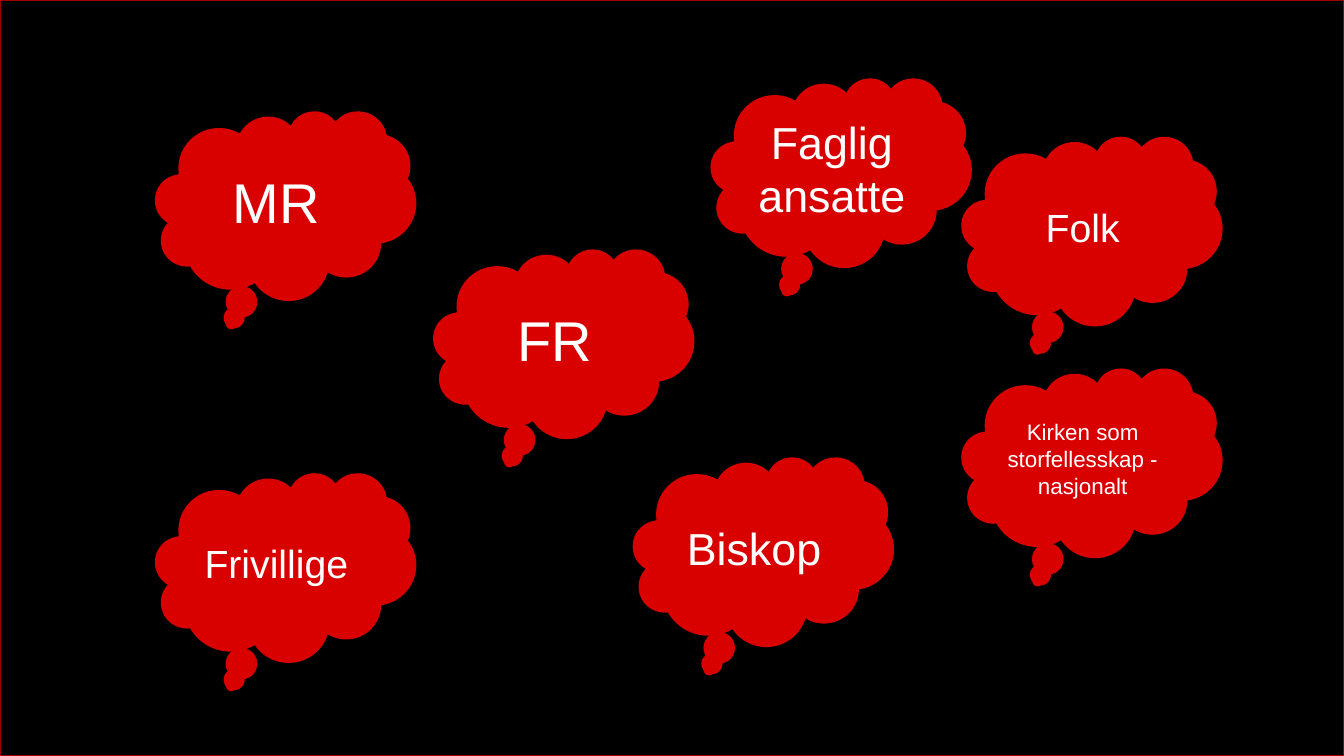
from pptx import Presentation
from pptx.dml.color import RGBColor
from pptx.enum.shapes import MSO_SHAPE
from pptx.enum.text import MSO_ANCHOR, PP_ALIGN
from pptx.util import Cm, Pt

RECTANGLE = MSO_SHAPE.RECTANGLE
CLOUD = MSO_SHAPE.CLOUD_CALLOUT
MIDDLE = MSO_ANCHOR.MIDDLE
CENTER = PP_ALIGN.CENTER

BLACK = RGBColor(0x00, 0x00, 0x00)
WHITE = RGBColor(0xFF, 0xFF, 0xFF)
RED = RGBColor(0xD9, 0x00, 0x00)
DARK_RED = RGBColor(0xA1, 0x00, 0x00)

SLIDE_WIDTH, SLIDE_HEIGHT = Cm(33.87), Cm(19.05)
CLOUD_WIDTH, CLOUD_HEIGHT = Cm(6.58), Cm(4.78)
LEFT_COLUMN, RIGHT_COLUMN = 3.91, 24.23

CLOUDS = [
    ("MR", 40, LEFT_COLUMN, 2.79),
    ("FR", 40, 10.92, 6.27),
    ("Faglig ansatte", 32, 17.91, 1.96),
    ("Biskop", 32, 15.95, 11.51),
    ("Kirken som storfellesskap - nasjonalt", 16, RIGHT_COLUMN, 9.27),
    ("Frivillige", 28, LEFT_COLUMN, 11.91),
    ("Folk", 28, RIGHT_COLUMN, 3.43),
]


def add_filled_shape(slide, kind, left, top, width, height, color):
    shape = slide.shapes.add_shape(kind, left, top, width, height)
    shape.shadow.inherit = False
    shape.fill.solid()
    shape.fill.fore_color.rgb = color
    return shape


def add_backdrop(slide):
    backdrop = add_filled_shape(slide, RECTANGLE, 0, 0, SLIDE_WIDTH, SLIDE_HEIGHT, BLACK)
    backdrop.line.color.rgb = DARK_RED
    backdrop.line.width = Pt(1)


def add_cloud(slide, text, size, left, top):
    cloud = add_filled_shape(slide, CLOUD, Cm(left), Cm(top), CLOUD_WIDTH, CLOUD_HEIGHT, RED)
    cloud.line.fill.background()
    frame = cloud.text_frame
    frame.word_wrap = True
    frame.vertical_anchor = MIDDLE
    paragraph = frame.paragraphs[0]
    paragraph.text = text
    paragraph.alignment = CENTER
    paragraph.font.name = "Arial"
    paragraph.font.size = Pt(size)
    paragraph.font.color.rgb = WHITE


def main():
    """Build a slide of red thought clouds on a black backdrop."""
    presentation = Presentation()
    presentation.slide_width = SLIDE_WIDTH
    presentation.slide_height = SLIDE_HEIGHT
    blank_layout = presentation.slide_layouts[6]
    slide = presentation.slides.add_slide(blank_layout)
    add_backdrop(slide)
    for text, size, left, top in CLOUDS:
        add_cloud(slide, text, size, left, top)
    presentation.save("out.pptx")


if __name__ == "__main__":
    main()
